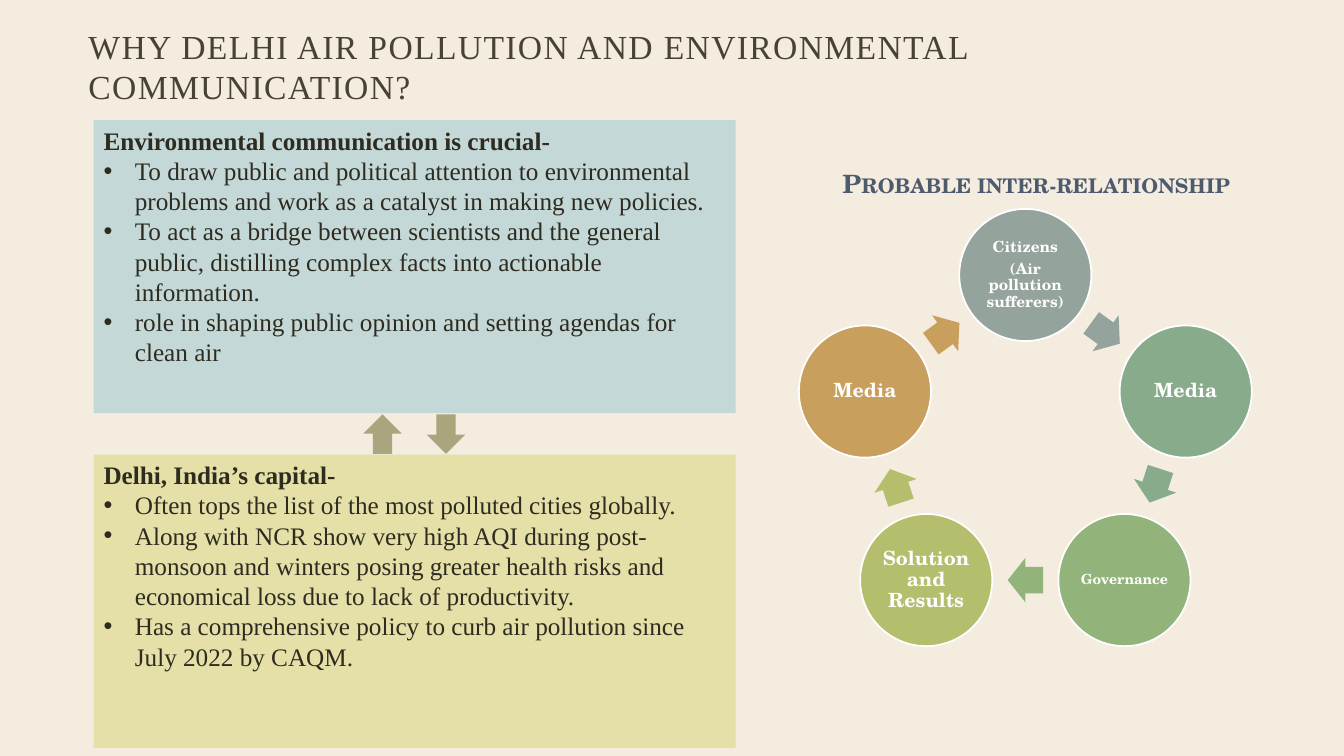
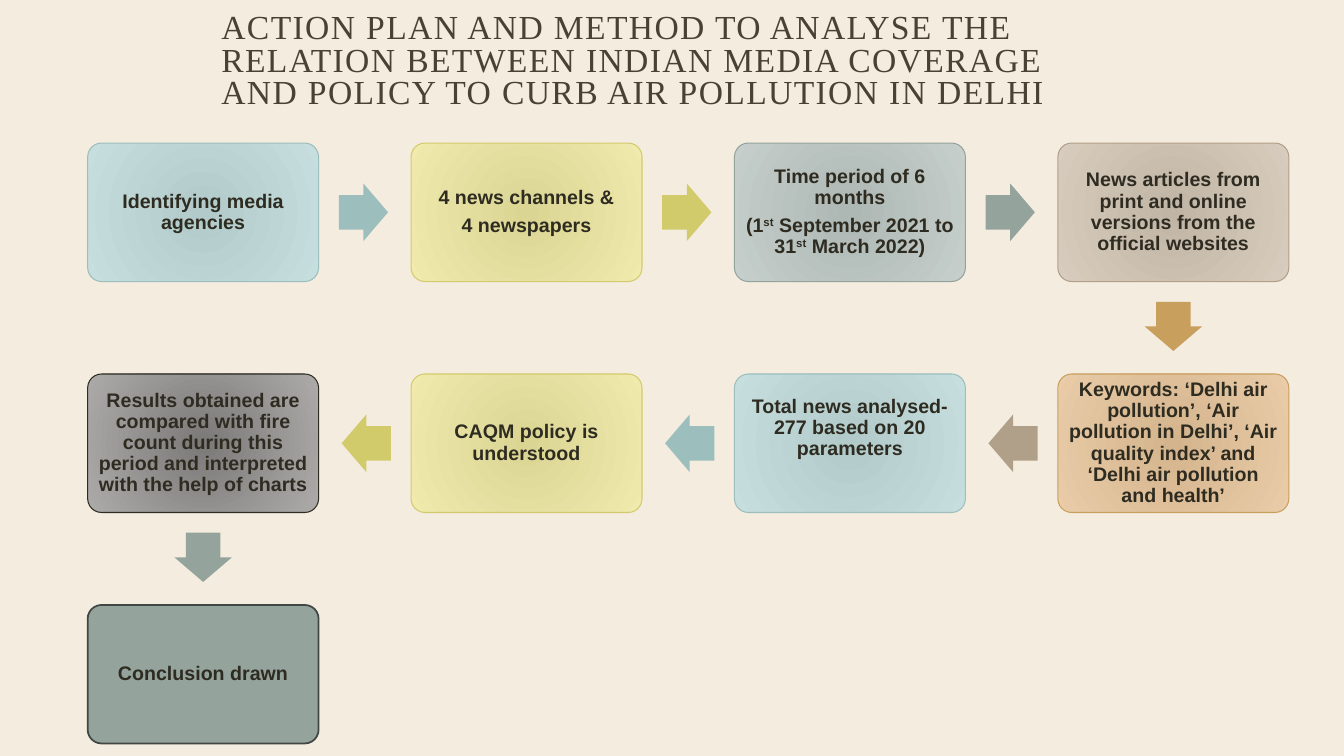
from math import cos, radians, sin

from lxml import etree
from pptx import Presentation
from pptx.dml.color import RGBColor
from pptx.enum.shapes import MSO_SHAPE as Shape
from pptx.enum.text import MSO_ANCHOR as Anchor, PP_ALIGN as Align
from pptx.oxml.ns import qn
from pptx.util import Cm, Pt

SERIF, SCHOLA, SANS = "Times New Roman", "TeX Gyre Schola", "Arial"

CREAM = RGBColor(0xF4, 0xEC, 0xDF)
BROWN = RGBColor(0x47, 0x42, 0x33)
INK = RGBColor(0x2E, 0x2B, 0x21)
WHITE = RGBColor(0xFF, 0xFF, 0xFF)
SLATE = RGBColor(0x4E, 0x5B, 0x6F)
KHAKI = RGBColor(0xA9, 0xA5, 0x7C)
PALE_TEAL = RGBColor(0xC4, 0xD8, 0xD7)
PALE_OLIVE = RGBColor(0xE4, 0xE0, 0xA7)
SAGE = RGBColor(0x95, 0xA3, 0x9D)
DARK_SAGE = RGBColor(0x41, 0x47, 0x45)
SEA_GREEN = RGBColor(0x88, 0xAB, 0x8B)
LEAF = RGBColor(0x92, 0xB4, 0x7A)
LIME = RGBColor(0xB5, 0xBE, 0x6C)
OCHRE = RGBColor(0xC8, 0x9F, 0x5D)
TEAL = RGBColor(0x9C, 0xBE, 0xBD)
YELLOW = RGBColor(0xD2, 0xCB, 0x6C)
TAUPE = RGBColor(0xB1, 0xA0, 0x89)

# Centre and edge colours of the radial fills, by outline colour
GRADIENTS = {
    TEAL: (RGBColor(0xB2, 0xCB, 0xCA), RGBColor(0xC6, 0xDE, 0xDE)),
    YELLOW: (RGBColor(0xDB, 0xD5, 0x94), RGBColor(0xF0, 0xEA, 0xAD)),
    SAGE: (RGBColor(0xAD, 0xB7, 0xB3), RGBColor(0xC6, 0xCF, 0xCB)),
    TAUPE: (RGBColor(0xC1, 0xB5, 0xA5), RGBColor(0xD8, 0xCC, 0xBE)),
    OCHRE: (RGBColor(0xD3, 0xB4, 0x8C), RGBColor(0xEA, 0xCC, 0xA9)),
    INK: (RGBColor(0x7B, 0x7A, 0x78), RGBColor(0xAC, 0xAB, 0xAA)),
}


def add_block(slide, kind, centre_x, centre_y, width, height, fill, line=None, line_width=1.25):
    """Add a flat shape placed by its centre, in centimetres."""
    shape = slide.shapes.add_shape(kind, Cm(centre_x - width / 2), Cm(centre_y - height / 2),
                                   Cm(width), Cm(height))
    shape.shadow.inherit = False
    shape.fill.solid()
    shape.fill.fore_color.rgb = fill
    if line is None:
        shape.line.fill.background()
    else:
        shape.line.color.rgb = line
        shape.line.width = Pt(line_width)
    return shape


def set_text(shape, text, font, size, colour, bold=False, align=Align.LEFT,
             anchor=Anchor.MIDDLE, inset=None, line_spacing=None, space_after=0):
    """Fill a shape with text; parts between ^ signs are superscript."""
    frame = shape.text_frame
    frame.word_wrap = True
    frame.vertical_anchor = anchor
    if inset is not None:
        frame.margin_left = frame.margin_right = Cm(inset)
        frame.margin_top = frame.margin_bottom = Cm(inset)
    for number, content in enumerate(text.split("\n")):
        paragraph = frame.add_paragraph() if number else frame.paragraphs[0]
        paragraph.alignment = align
        paragraph.space_after = Pt(space_after)
        if line_spacing:
            paragraph.line_spacing = line_spacing
        for part_number, part in enumerate(content.split("^")):
            run = paragraph.add_run()
            run.text = part
            run.font.name = font
            run.font.size = Pt(size)
            run.font.bold = bold
            run.font.color.rgb = colour
            if part_number % 2:
                run._r.get_or_add_rPr().set("baseline", "30000")
    return frame


presentation = Presentation()
presentation.slide_width, presentation.slide_height = Cm(33.87), Cm(19.05)
background = presentation.slide_master.background.fill
background.solid()
background.fore_color.rgb = CREAM

# Slides with their titles: text, left, top, width, height, line spacing
titles = [
    ("WHY DELHI AIR POLLUTION AND ENVIRONMENTAL COMMUNICATION?",
     1.98, 0.91, 30.35, 1.5, None),
    ("ACTION PLAN AND METHOD TO ANALYSE THE RELATION BETWEEN INDIAN MEDIA COVERAGE "
     "AND POLICY TO CURB AIR POLLUTION IN DELHI", 5.33, 0.33, 23.01, 2.49, 0.8),
]
slides = []
for text, left, top, width, height, line_spacing in titles:
    slide = presentation.slides.add_slide(presentation.slide_layouts[6])
    title = slide.shapes.add_textbox(Cm(left), Cm(top), Cm(width), Cm(height))
    frame = set_text(title, text, SERIF, 24, BROWN, line_spacing=line_spacing)
    frame.paragraphs[0].runs[0]._r.get_or_add_rPr().set("spc", "100")
    slides.append(slide)
reasons_slide, method_slide = slides

# Arrows between the two panels
for kind, centre_x in ((Shape.UP_ARROW, 9.64), (Shape.DOWN_ARROW, 11.24)):
    add_block(reasons_slide, kind, centre_x, 10.94, 0.97, 1, KHAKI)

# Panels with a bold lead line and bullets
panels = [
    (6.72, PALE_TEAL,
     "Environmental communication is crucial-\n"
     "To draw public and political attention to environmental problems and work as a "
     "catalyst in making new policies.\n"
     "To act as a bridge between scientists and the general public, distilling complex "
     "facts into actionable information.\n"
     "role in shaping public opinion and setting agendas for clean air"),
    (15.15, PALE_OLIVE,
     "Delhi, India’s capital-\n"
     "Often tops the list of the most polluted cities globally.\n"
     "Along with NCR show very high AQI during post-monsoon and winters posing greater "
     "health risks and economical loss due to lack of productivity.\n"
     "Has a comprehensive policy to curb air pollution since July 2022 by CAQM."),
]
for centre_y, fill, text in panels:
    panel = add_block(reasons_slide, Shape.RECTANGLE, 10.45, centre_y, 16.18, 7.39, fill)
    frame = set_text(panel, text, SERIF, 18, INK, anchor=Anchor.TOP)
    lead, *bullets = frame.paragraphs
    lead.runs[0].font.bold = True
    for paragraph in bullets:
        properties = paragraph._p.get_or_add_pPr()
        properties.set("marL", str(Cm(0.79)))
        properties.set("indent", str(-Cm(0.79)))
        etree.SubElement(properties, qn("a:buFont")).set("typeface", "Arial")
        etree.SubElement(properties, qn("a:buChar")).set("char", "•")

# Heading of the cycle
heading = reasons_slide.shapes.add_textbox(Cm(20.98), Cm(4.11), Cm(11.18), Cm(1.02))
frame = set_text(heading, "Probable inter-relationship", SCHOLA, 18, SLATE, bold=True,
                 anchor=Anchor.TOP)
frame.paragraphs[0].runs[0]._r.get_or_add_rPr().set("cap", "small")

# Cycle: circles on a ring, arrows halfway between them
CYCLE_X, CYCLE_Y, RING_RADIUS = 25.84, 11.18, 4.25
actors = [
    ("Citizens\n(Air pollution sufferers)", 11, SAGE),
    ("Media", 14, SEA_GREEN),
    ("Governance", 10, LEAF),
    ("Solution and Results", 14, LIME),
    ("Media", 14, OCHRE),
]
step_angle = 360 / len(actors)
arrow_radius = RING_RADIUS * cos(radians(step_angle / 2))
for number, (text, size, fill) in enumerate(actors):
    angle = number * step_angle
    circle = add_block(reasons_slide, Shape.OVAL,
                       CYCLE_X + RING_RADIUS * sin(radians(angle)),
                       CYCLE_Y - RING_RADIUS * cos(radians(angle)), 3.33, 3.33, fill, WHITE)
    set_text(circle, text, SCHOLA, size, WHITE, bold=True, align=Align.CENTER, inset=0.03,
             line_spacing=0.9, space_after=0.35 * size)
    angle += step_angle / 2
    arrow = add_block(reasons_slide, Shape.RIGHT_ARROW,
                      CYCLE_X + arrow_radius * sin(radians(angle)),
                      CYCLE_Y - arrow_radius * cos(radians(angle)), 0.89, 1.12, fill)
    arrow.adjustments[0] = 0.6
    arrow.rotation = angle

# Method steps: text, outline colour, colour of the arrow that follows
steps = [
    ("Identifying media agencies", TEAL, TEAL),
    ("4 news channels &\n4 newspapers", YELLOW, YELLOW),
    ("Time period of 6 months\n(1^st^ September 2021 to 31^st^ March 2022)", SAGE, SAGE),
    ("News articles from print and online versions from the official websites", TAUPE, OCHRE),
    ("Keywords: ‘Delhi air pollution’, ‘Air pollution in Delhi’, ‘Air quality index’ and "
     "‘Delhi air pollution and health’", OCHRE, TAUPE),
    ("Total news analysed- 277 based on 20 parameters", TEAL, TEAL),
    ("CAQM policy is understood", YELLOW, YELLOW),
    ("Results obtained are compared with fire count during this period and interpreted "
     "with the help of charts", INK, SAGE),
    ("Conclusion drawn", DARK_SAGE, None),
]
COLUMNS, BOX_WIDTH, BOX_HEIGHT = 4, 5.82, 3.49
COLUMN_PITCH, ROW_PITCH = 8.15, 5.82
FIRST_X, FIRST_Y = 5.12, 5.35
ARROW_LENGTH, ARROW_WIDTH, ARROW_GAP = 1.24, 1.45, 0.51
arrow_offset = ARROW_GAP + ARROW_LENGTH / 2

for number, (text, outline, arrow_fill) in enumerate(steps):
    # Rows run alternately rightwards and leftwards
    row, place = divmod(number, COLUMNS)
    direction = -1 if row % 2 else 1
    column = place if direction == 1 else COLUMNS - 1 - place
    centre_x = FIRST_X + column * COLUMN_PITCH
    centre_y = FIRST_Y + row * ROW_PITCH

    box = add_block(method_slide, Shape.ROUNDED_RECTANGLE, centre_x, centre_y, BOX_WIDTH,
                    BOX_HEIGHT, SAGE, outline, 0.75 if outline in GRADIENTS else 1.25)
    box.adjustments[0] = 0.1
    if outline in GRADIENTS:
        box.fill.gradient()
        for stop, position, colour in zip(box.fill.gradient_stops, (0, 1), GRADIENTS[outline]):
            stop.position = position
            stop.color.rgb = colour
        linear = box._element.spPr.find(".//" + qn("a:lin"))
        radial = etree.Element(qn("a:path"), {"path": "circle"})
        etree.SubElement(radial, qn("a:fillToRect"),
                         {side: "100000" for side in "ltrb"})
        linear.getparent().replace(linear, radial)
    frame = set_text(box, text, SANS, 14, INK, bold=True, align=Align.CENTER, inset=0.15,
                     line_spacing=0.9, space_after=4.9)
    if text.startswith("Total"):
        frame.margin_bottom = Cm(0.9)

    # Arrow to the next step
    if arrow_fill is None:
        continue
    if place == COLUMNS - 1:
        rotation = 90
        centre_y += BOX_HEIGHT / 2 + arrow_offset
    else:
        rotation = 0 if direction == 1 else 180
        centre_x += direction * (BOX_WIDTH / 2 + arrow_offset)
    arrow = add_block(method_slide, Shape.RIGHT_ARROW, centre_x, centre_y, ARROW_LENGTH,
                      ARROW_WIDTH, arrow_fill)
    arrow.adjustments[0] = 0.6
    arrow.rotation = rotation

presentation.save("out.pptx")
